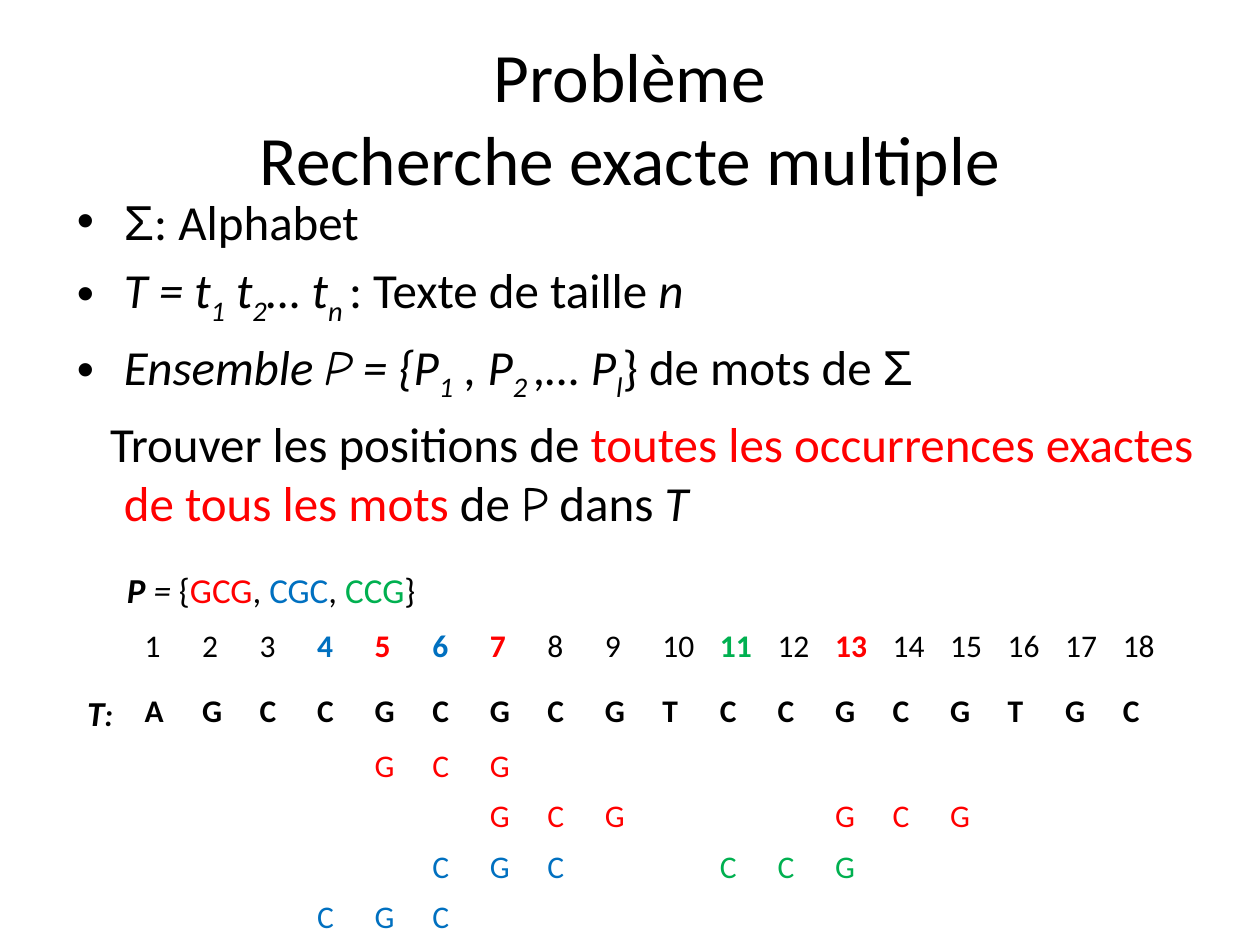
from lxml.etree import SubElement
from pptx import Presentation
from pptx.dml.color import RGBColor
from pptx.enum.text import MSO_ANCHOR as Anchor, PP_ALIGN as Align
from pptx.oxml.ns import qn
from pptx.util import Cm, Pt

BLACK, RED, BLUE, GREEN = "000000", "FF0000", "0070C0", "00B050"


def style(font, size=None, color=None, name=None, bold=None, italic=None):
    if size:
        font.size = Pt(size)
    if color:
        font.color.rgb = RGBColor.from_string(color)
    if name:
        font.name = name
    font.bold = bold
    font.italic = italic


def add_runs(paragraph, runs):
    for text, options in runs:
        run = paragraph.add_run()
        run.text = text
        options = dict(options)
        baseline = options.pop("baseline", None)
        style(run.font, **options)
        if baseline:
            run._r.get_or_add_rPr().set("baseline", str(baseline))


presentation = Presentation()
presentation.slide_width = Cm(25.4)
presentation.slide_height = Cm(19.05)
slide = presentation.slides.add_slide(presentation.slide_layouts[6])

title = slide.shapes.add_textbox(Cm(1.27), Cm(0.76), Cm(22.86), Cm(3.18)).text_frame
title.word_wrap = True
title.vertical_anchor = Anchor.MIDDLE
paragraph = title.paragraphs[0]
paragraph.text = "Problème\vRecherche exacte multiple"
paragraph.alignment = Align.CENTER
style(paragraph.font, 39.6, BLACK, "Calibri")

plain = {}
italic = {"italic": True}
index = {"italic": True, "baseline": -25000}
sigma = {"name": "Arial"}
script_letter = {"name": "Comic Neue"}
red = {"color": RED}
body_lines = [
    [("Σ", sigma), (": Alphabet", plain)],
    [("T = t", italic), ("1", index), (" t", italic), ("2", index), ("… t", italic),
     ("n ", index), (": Texte de taille ", plain), ("n", italic)],
    [("Ensemble ", italic), ("P", script_letter | italic), (" = {P", italic),
     ("1", index), (" , P", italic), ("2 ", index), (",… P", italic), ("l", index),
     ("} de mots de ", plain), ("Σ", sigma)],
    [("Trouver les positions de ", plain),
     ("toutes les occurrences exactes de tous les mots ", red),
     ("de ", plain), ("P", script_letter), (" dans ", plain), ("T", italic)],
]
body = slide.shapes.add_textbox(Cm(1.3), Cm(3.73), Cm(23.39), Cm(7.01)).text_frame
body.word_wrap = True
for number, runs in enumerate(body_lines):
    paragraph = body.paragraphs[0] if number == 0 else body.add_paragraph()
    paragraph.space_before = Pt(5.6)
    bulleted = number < 3
    properties = paragraph._p.get_or_add_pPr()
    properties.set("marL", str(Cm(0.95)))
    properties.set("indent", str(Cm(-0.95 if bulleted else -0.28)))
    if bulleted:
        SubElement(properties, qn("a:buFont")).set("typeface", "Arial")
        SubElement(properties, qn("a:buChar")).set("char", "•")
    style(paragraph.font, 28, BLACK, "Calibri")
    add_runs(paragraph, runs)

text = "AGCCGCGCGTCCGCGTGC"
word_colors = {"GCG": RED, "CGC": BLUE, "CCG": GREEN}
matches = [(2, 5, "GCG"), (3, 7, "GCG"), (3, 13, "GCG"),
           (4, 6, "CGC"), (4, 11, "CCG"), (5, 4, "CGC")]
start_colors = {start: word_colors[word] for row, start, word in matches}

contents = {(1, 0): [("T", {"size": 20, "bold": True, "italic": True}),
                     (":", {"bold": True, "italic": True})]}
for position, letter in enumerate(text, 1):
    color = start_colors.get(position)
    contents[0, position] = [(str(position), {"color": color, "bold": bool(color)})]
    contents[1, position] = [(letter, {"bold": True})]
for row, start, word in matches:
    for offset, letter in enumerate(word):
        contents[row, start + offset] = [(letter, {"color": word_colors[word]})]

table = slide.shapes.add_table(6, 19, Cm(1.5), Cm(12.52), Cm(22), Cm(6.48)).table
table.first_row = False
table.horz_banding = False
for column in table.columns:
    column.width = Cm(1.16)
for row_number, row in enumerate(table.rows):
    row.height = Cm(1.32 if row_number == 0 else 0.91)
    for column_number, cell in enumerate(row.cells):
        cell.fill.background()
        paragraph = cell.text_frame.paragraphs[0]
        style(paragraph.font, 18, BLACK, "Calibri")
        add_runs(paragraph, contents.get((row_number, column_number), []))

words = slide.shapes.add_textbox(Cm(2.31), Cm(11.33), Cm(6.43), Cm(1.12)).text_frame
words.word_wrap = False
paragraph = words.paragraphs[0]
style(paragraph.font, 20, BLACK, "Calibri")
add_runs(paragraph, [("P ", {"bold": True, "italic": True}), ("= ", italic), ("{", plain)])
for number, (word, color) in enumerate(word_colors.items()):
    if number:
        add_runs(paragraph, [(", ", plain)])
    add_runs(paragraph, [(word, {"color": color})])
add_runs(paragraph, [("}", plain)])

presentation.save("out.pptx")
